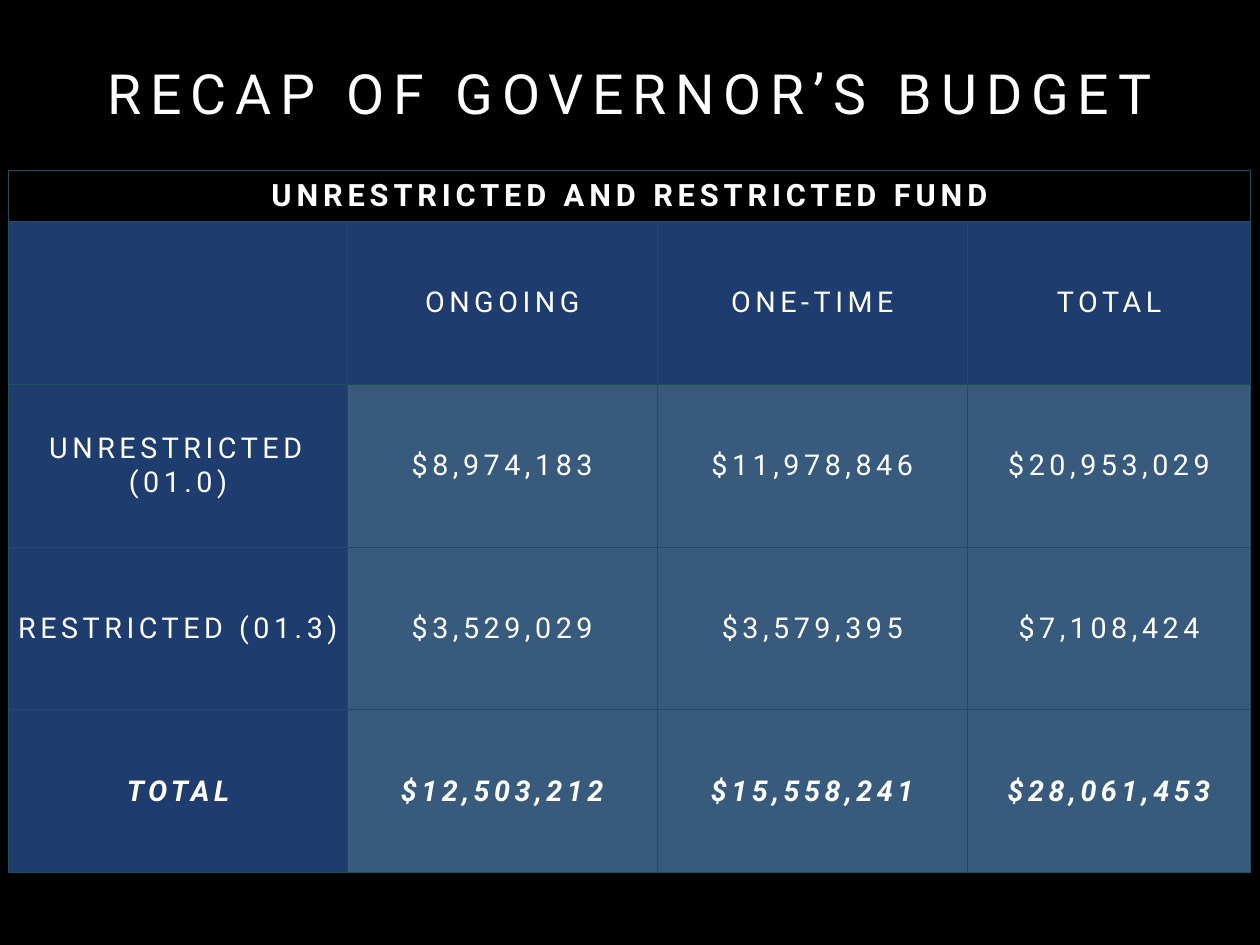
"""Build the slide that recaps the governor's budget by fund."""
from dataclasses import dataclass

from lxml import etree
from pptx import Presentation
from pptx import util as u
from pptx.dml.color import RGBColor
from pptx.enum import text
from pptx.oxml import ns
from pptx.slide import Slide
from pptx.table import Table, _Cell
from pptx.text.text import TextFrame

BLACK = RGBColor(0x00, 0x00, 0x00)
WHITE = RGBColor(0xFF, 0xFF, 0xFF)
NAVY = RGBColor(0x1E, 0x3C, 0x6E)
STEEL = RGBColor(0x37, 0x5A, 0x7D)
TEAL = RGBColor(0x1E, 0x4E, 0x5C)
CYAN = RGBColor(0x53, 0xD5, 0xFD)
GRID = RGBColor(0x25, 0x45, 0x73)

FONT = "Roboto"
COLUMN_WIDTHS = (275, 252, 252, 230.4)
BANNER_HEIGHT = 41.8
ROW_HEIGHT = 132.3
CELL_INSET = 4.3


@dataclass(frozen=True)
class Lettering:
    size: float
    spacing: float
    bold: bool = False
    italic: bool = False


@dataclass(frozen=True)
class BudgetRow:
    labels: tuple[str, str, str, str]
    lettering: Lettering
    amount_fill: RGBColor


TITLE = Lettering(45, 7.2)
BANNER = Lettering(25, 4, bold=True)
BODY = Lettering(23.3, 3.7)
SUM = Lettering(23.3, 3.7, bold=True, italic=True)

BUDGET_ROWS = (
    BudgetRow(("", "ONGOING", "ONE-TIME", "TOTAL"), BODY, NAVY),
    BudgetRow(("UNRESTRICTED (01.0)", "$8,974,183", "$11,978,846", "$20,953,029"), BODY, STEEL),
    BudgetRow(("RESTRICTED (01.3)", "$3,529,029", "$3,579,395", "$7,108,424"), BODY, STEEL),
    BudgetRow(("TOTAL", "$12,503,212", "$15,558,241", "$28,061,453"), SUM, STEEL),
)


def write(frame: TextFrame, wording: str, lettering: Lettering) -> None:
    """Put one centred white line of lettering into a text frame."""
    paragraph = frame.paragraphs[0]
    paragraph.alignment = text.PP_ALIGN.CENTER
    font = paragraph.font
    font.name = FONT
    font.size = u.Pt(lettering.size)
    font.bold = lettering.bold
    font.italic = lettering.italic
    font.color.rgb = WHITE
    if wording:
        run = paragraph.add_run()
        run.text = wording
        run._r.get_or_add_rPr().set("spc", str(round(lettering.spacing * 100)))


def set_borders(cell: _Cell, left: RGBColor, right: RGBColor, top: RGBColor, bottom: RGBColor) -> None:
    """Draw the four one-point borders of a cell."""
    properties = cell._tc.get_or_add_tcPr()
    edges = {"a:lnL": left, "a:lnR": right, "a:lnT": top, "a:lnB": bottom}
    for position, (tag, color) in enumerate(edges.items()):
        line = etree.Element(ns.qn(tag), w=str(u.Pt(1)))
        fill = etree.SubElement(line, ns.qn("a:solidFill"))
        etree.SubElement(fill, ns.qn("a:srgbClr"), val=str(color))
        properties.insert(position, line)


def fill_cell(cell: _Cell, wording: str, lettering: Lettering, color: RGBColor) -> None:
    """Fill a cell and write its wording in the middle."""
    cell.fill.solid()
    cell.fill.fore_color.rgb = color
    cell.vertical_anchor = text.MSO_ANCHOR.MIDDLE
    cell.margin_left = cell.margin_right = u.Pt(CELL_INSET)
    cell.margin_top = cell.margin_bottom = u.Pt(CELL_INSET)
    write(cell.text_frame, wording, lettering)


def add_title(slide: Slide) -> None:
    """Place and format the slide title."""
    title = slide.shapes.title
    title.left, title.top, title.width, title.height = map(u.Pt, (51.84, 48.24, 920.16, 112.32))
    frame = title.text_frame
    frame.word_wrap = True
    frame.auto_size = text.MSO_AUTO_SIZE.NONE
    frame.vertical_anchor = text.MSO_ANCHOR.TOP
    frame.margin_left = frame.margin_right = frame.margin_top = frame.margin_bottom = 0
    write(frame, "RECAP OF GOVERNOR’S BUDGET", TITLE)


def add_banner(budget: Table) -> None:
    """Merge the first row into the heading of the table."""
    last = len(COLUMN_WIDTHS) - 1
    heading, end = budget.cell(0, 0), budget.cell(0, last)
    heading.merge(end)
    fill_cell(heading, "UNRESTRICTED AND RESTRICTED FUND", BANNER, BLACK)
    for column in range(last + 1):
        set_borders(budget.cell(0, column), TEAL, CYAN if column == last else TEAL, TEAL, GRID)


def add_budget(slide: Slide) -> None:
    """Add the table of ongoing and one-time funds."""
    heights = (BANNER_HEIGHT,) + (ROW_HEIGHT,) * len(BUDGET_ROWS)
    budget = slide.shapes.add_table(
        len(heights), len(COLUMN_WIDTHS), u.Pt(7.2), u.Pt(138.24),
        u.Pt(sum(COLUMN_WIDTHS)), u.Pt(sum(heights)),
    ).table
    budget.first_row = budget.horz_banding = False
    for column, width in zip(budget.columns, COLUMN_WIDTHS):
        column.width = u.Pt(width)
    for row, height in zip(budget.rows, heights):
        row.height = u.Pt(height)

    add_banner(budget)
    last_row, last_column = len(BUDGET_ROWS), len(COLUMN_WIDTHS) - 1
    for row, fund in enumerate(BUDGET_ROWS, start=1):
        for column, label in enumerate(fund.labels):
            cell = budget.cell(row, column)
            fill_cell(cell, label, fund.lettering, fund.amount_fill if column else NAVY)
            set_borders(
                cell,
                left=GRID if column else TEAL,
                right=TEAL if column == last_column else GRID,
                top=TEAL if row == 2 else GRID,
                bottom=TEAL if row in (1, last_row) else GRID,
            )


def main() -> None:
    """Build and save the presentation."""
    deck = Presentation()
    deck.slide_width, deck.slide_height = u.Pt(1024), u.Pt(768)
    slide = deck.slides.add_slide(deck.slide_layouts.get_by_name("Title Only"))
    slide.background.fill.solid()
    slide.background.fill.fore_color.rgb = BLACK
    add_title(slide)
    add_budget(slide)
    deck.save("out.pptx")


if __name__ == "__main__":
    main()
